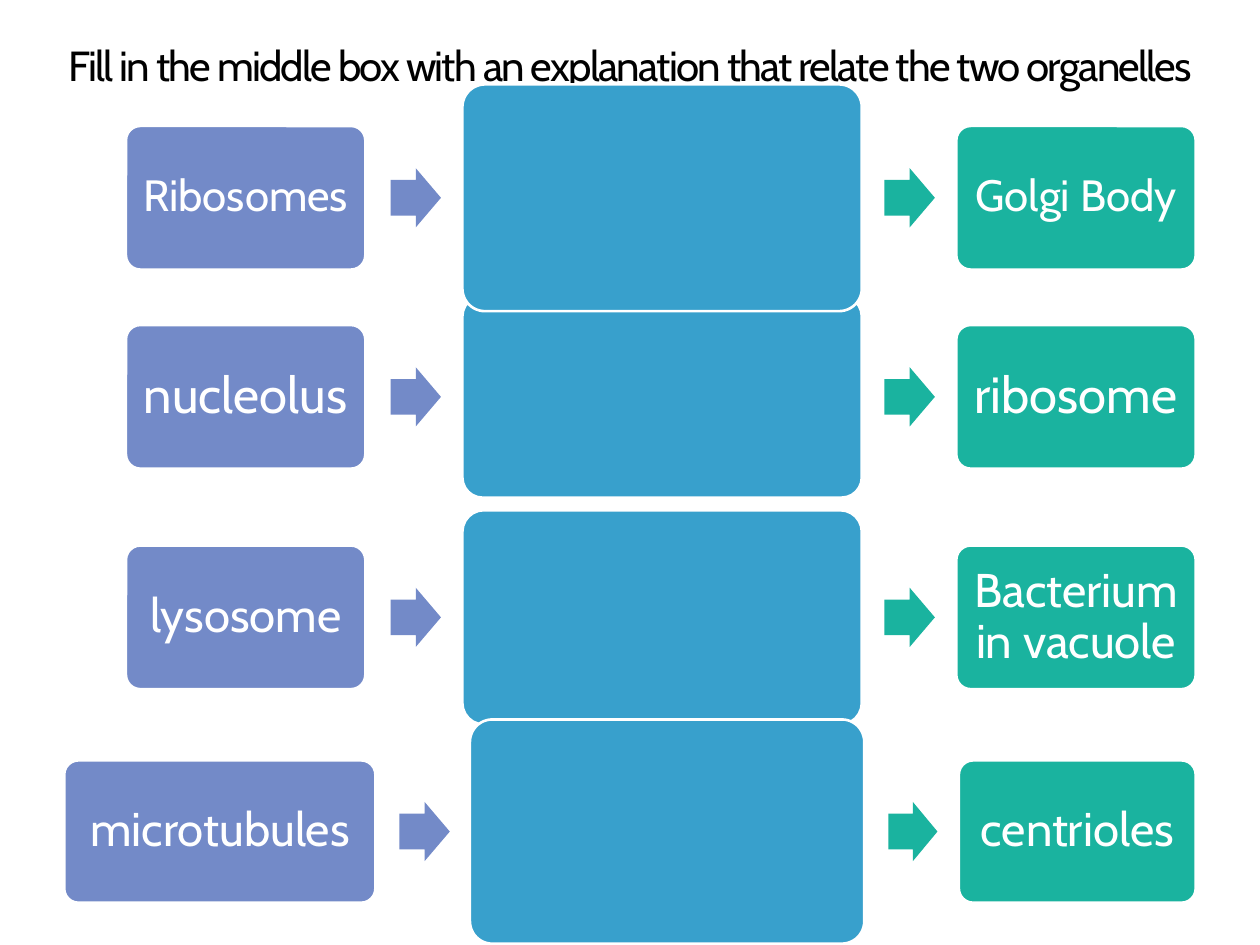
from dataclasses import dataclass

from pptx import Presentation
from pptx.dml.color import RGBColor
from pptx.enum.shapes import MSO_SHAPE
from pptx.enum.text import MSO_ANCHOR, PP_ALIGN
from pptx.util import Inches, Pt

ROUNDED = MSO_SHAPE.ROUNDED_RECTANGLE
ARROW = MSO_SHAPE.RIGHT_ARROW
CENTER = PP_ALIGN.CENTER
MIDDLE = MSO_ANCHOR.MIDDLE


@dataclass(frozen=True)
class Theme:
    font: str = "Cabin"
    title_size: int = 24
    title_spacing: int = -100
    title: RGBColor = RGBColor(0x00, 0x00, 0x00)
    label: RGBColor = RGBColor(0xFF, 0xFF, 0xFF)
    outline: RGBColor = RGBColor(0xFF, 0xFF, 0xFF)
    first: RGBColor = RGBColor(0x73, 0x8A, 0xC8)
    answer: RGBColor = RGBColor(0x38, 0xA0, 0xCC)
    second: RGBColor = RGBColor(0x1A, 0xB3, 0x9F)


@dataclass(frozen=True)
class Row:
    first: str
    second: str
    middle: float
    answer_height: float
    size: int
    columns: tuple
    box_height: float = 1.14


THEME = Theme()
ARROW_HEIGHT = 0.47

# (left, width) of first box, arrow, answer box, arrow, second box
COLUMNS = ((1, 1.9), (3.1, 0.4), (3.67, 3.17), (7.02, 0.4), (7.59, 1.9))
WIDE_COLUMNS = ((0.51, 2.47), (3.17, 0.4), (3.73, 3.13), (7.05, 0.39), (7.61, 1.88))

# Back to front: the top row overlaps the one below it
ROWS = (
    Row("nucleolus", "ribosome", 3.15, 1.6, 29, COLUMNS),
    Row("lysosome", "Bacterium in vacuole", 4.9, 1.7, 27, COLUMNS),
    Row("microtubules", "centrioles", 6.6, 1.78, 27, WIDE_COLUMNS, 1.13),
    Row("Ribosomes", "Golgi Body", 1.57, 1.8, 25, COLUMNS),
)


def format_run(r, size, color):
    r.font.name = THEME.font
    r.font.size = Pt(size)
    r.font.color.rgb = color


def add_title(slide, text):
    tb = slide.shapes.add_textbox(Inches(0.29), Inches(0.25), Inches(9.42), Inches(0.52))
    tf = tb.text_frame
    tf.word_wrap = True
    tf.vertical_anchor = MIDDLE
    tf.text = text
    p = tf.paragraphs[0]
    p.alignment = CENTER
    r = p.runs[0]
    format_run(r, THEME.title_size, THEME.title)
    r.font._element.set("spc", str(THEME.title_spacing))


def add_block(slide, kind, column, middle, height, fill, adjustments):
    """Add a filled shape in a column, centred on the row's middle line."""
    left, width = column
    sp = slide.shapes.add_shape(kind, Inches(left), Inches(middle - height / 2),
                                Inches(width), Inches(height))
    sp.shadow.inherit = False
    sp.fill.solid()
    sp.fill.fore_color.rgb = fill
    for i, value in enumerate(adjustments):
        sp.adjustments[i] = value
    return sp


def add_arrow(slide, column, middle, fill):
    sp = add_block(slide, ARROW, column, middle, ARROW_HEIGHT, fill, (0.6, 0.5))
    sp.line.fill.background()


def add_box(slide, column, middle, height, fill):
    sp = add_block(slide, ROUNDED, column, middle, height, fill, (0.1,))
    sp.line.color.rgb = THEME.outline
    sp.line.width = Pt(1.5)
    return sp


def set_label(sp, text, size):
    tf = sp.text_frame
    tf.word_wrap = True
    tf.vertical_anchor = MIDDLE
    inset = Inches(0.1)
    tf.margin_left = tf.margin_right = tf.margin_top = tf.margin_bottom = inset
    tf.text = text
    p = tf.paragraphs[0]
    p.alignment = CENTER
    p.line_spacing = 0.9
    format_run(p.runs[0], size, THEME.label)


def add_row(slide, row):
    first, arrow_in, answer, arrow_out, second = row.columns
    sp = add_box(slide, first, row.middle, row.box_height, THEME.first)
    set_label(sp, row.first, row.size)
    add_arrow(slide, arrow_in, row.middle, THEME.first)
    add_box(slide, answer, row.middle, row.answer_height, THEME.answer)
    add_arrow(slide, arrow_out, row.middle, THEME.second)
    sp = add_box(slide, second, row.middle, row.box_height, THEME.second)
    set_label(sp, row.second, row.size)


def main():
    prs = Presentation()
    prs.slide_width, prs.slide_height = Inches(10), Inches(7.5)
    slide = prs.slides.add_slide(prs.slide_layouts[6])
    add_title(slide, "Fill in the middle box with an explanation that relate the two organelles")
    for row in ROWS:
        add_row(slide, row)
    prs.save("out.pptx")


if __name__ == "__main__":
    main()
